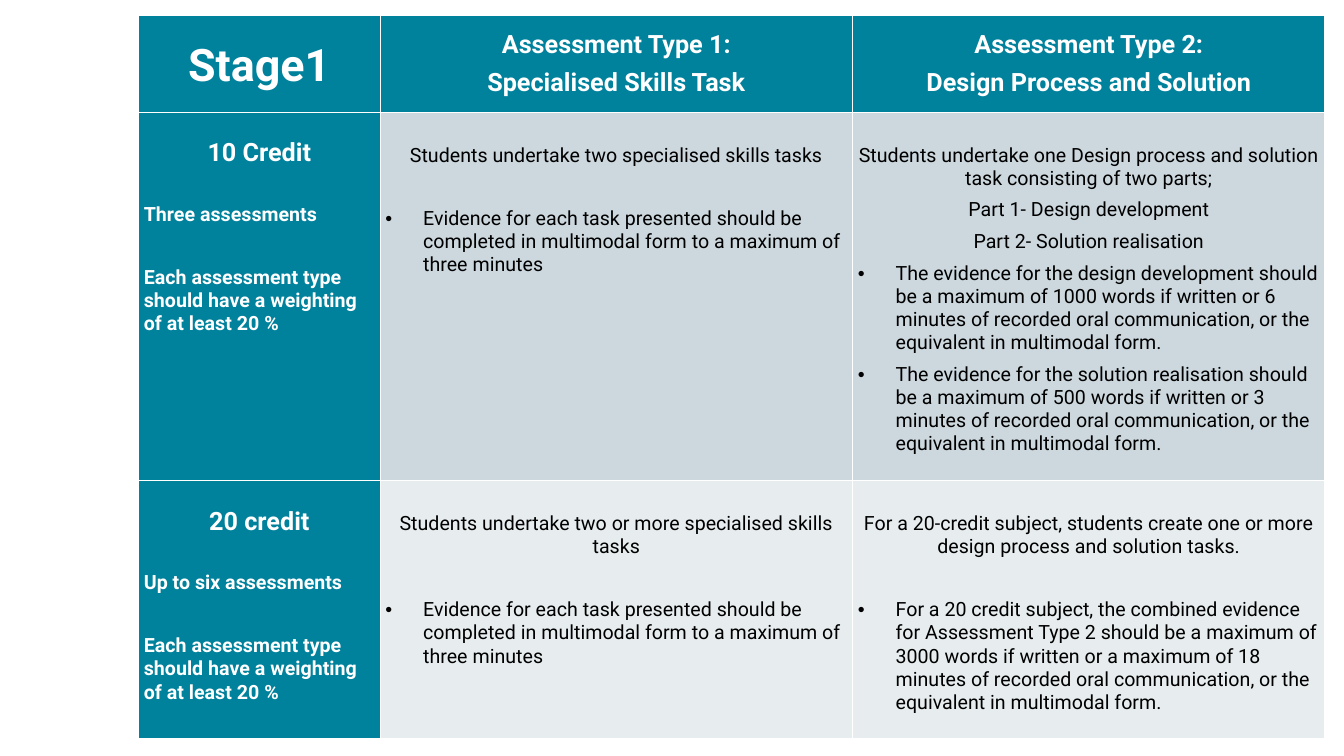
"""Build the Stage 1 assessment overview slide as one table."""
from lxml.etree import SubElement
from pptx import Presentation
from pptx.dml.color import RGBColor
from pptx.enum.text import MSO_ANCHOR as Anchor, PP_ALIGN as Align
from pptx.oxml.ns import qn
from pptx.util import Pt

PX = 9525
TEAL = RGBColor(0x00, 0x81, 0x9C)
MIST = RGBColor(0xCC, 0xD8, 0xDE)
PALE = RGBColor(0xE7, 0xED, 0xEF)
WHITE = RGBColor(0xFF, 0xFF, 0xFF)
BLACK = RGBColor(0x00, 0x00, 0x00)
WIDTHS = [230, 450, 450]
HEIGHTS = [92, 351, 245]
INDENT = 36

STYLES = {
    "stage": (32, Align.CENTER, 0),
    "head": (18, Align.CENTER, 6),
    "count": (14, Align.LEFT, 24.9),
    "weight": (14, Align.LEFT, 28.4),
    "intro": (14, Align.CENTER, 6),
    "bullet": (14, Align.LEFT, 6),
    "apart": (14, Align.LEFT, 28.4),
}
WEIGHT = ("weight", "Each assessment type should have a weighting of at least 20 %")
EVIDENCE = ("apart", "Evidence for each task presented should be completed in "
            "multimodal form to a maximum of three minutes")
ROWS = [
    [
        [("stage", "Stage1")],
        [("head", "Assessment Type 1:"), ("head", "Specialised Skills Task")],
        [("head", "Assessment Type 2:"), ("head", "Design Process and Solution")],
    ],
    [
        [("head", "10 Credit"), ("count", "Three assessments"), WEIGHT],
        [("intro", "Students undertake two specialised skills tasks"), EVIDENCE],
        [
            ("intro", "Students undertake one Design process and solution task "
             "consisting of two parts;"),
            ("intro", "Part 1- Design development"),
            ("intro", "Part 2- Solution realisation"),
            ("bullet", "The evidence for the design development should be a maximum "
             "of 1000 words if written or 6 minutes of recorded oral communication, "
             "or the equivalent in multimodal form."),
            ("bullet", "The evidence for the solution realisation should be a maximum "
             "of 500 words if written or 3 minutes of recorded oral communication, "
             "or the equivalent in multimodal form."),
        ],
    ],
    [
        [("head", "20 credit"), ("count", "Up to six assessments"), WEIGHT],
        [("intro", "Students undertake two or more specialised skills tasks"), EVIDENCE],
        [
            ("intro", "For a 20-credit subject, students create one or more design "
             "process and solution tasks."),
            ("apart", "For a 20 credit subject, the combined evidence for Assessment "
             "Type 2 should be a maximum of 3000 words if written or a maximum of "
             "18 minutes of recorded oral communication, or the equivalent in "
             "multimodal form."),
        ],
    ],
]

deck = Presentation()
deck.slide_width, deck.slide_height = 1280 * PX, 720 * PX
slide = deck.slides.add_slide(deck.slide_layouts[6])
table = slide.shapes.add_table(
    3, 3, 132 * PX, 15 * PX, sum(WIDTHS) * PX, sum(HEIGHTS) * PX).table
table.first_col = True
table.horz_banding = False
for col, width in zip(table.columns, WIDTHS):
    col.width = width * PX
for row, height in zip(table.rows, HEIGHTS):
    row.height = height * PX

for r, row in enumerate(ROWS):
    for c, lines in enumerate(row):
        cell = table.cell(r, c)
        strong = r == 0 or c == 0
        cell.fill.solid()
        cell.fill.fore_color.rgb = TEAL if strong else (MIST if r == 1 else PALE)
        cell.margin_left = cell.margin_right = 5 * PX
        cell.margin_top = cell.margin_bottom = 0
        if r == 0:
            cell.vertical_anchor = Anchor.MIDDLE
        else:
            cell.margin_top = (25 if c == 0 else 30) * PX
        frame = cell.text_frame
        frame.text = "\n".join(text for kind, text in lines)
        for i, (para, (kind, text)) in enumerate(zip(frame.paragraphs, lines)):
            size, align, gap = STYLES[kind]
            para.alignment = align
            para.space_before = Pt(gap if i else 0)
            if kind == "stage":
                para.line_spacing = 1.07
            if kind in ("bullet", "apart"):
                props = para._p.get_or_add_pPr()
                props.set("marL", str(INDENT * PX))
                props.set("indent", str(-INDENT * PX))
                SubElement(props, qn("a:buFont")).set("typeface", "Arial")
                SubElement(props, qn("a:buChar")).set("char", "•")
            font = para.runs[0].font
            font.name = "Roboto"
            font.size = Pt(size)
            font.bold = strong
            font.color.rgb = WHITE if strong else BLACK

deck.save("out.pptx")
